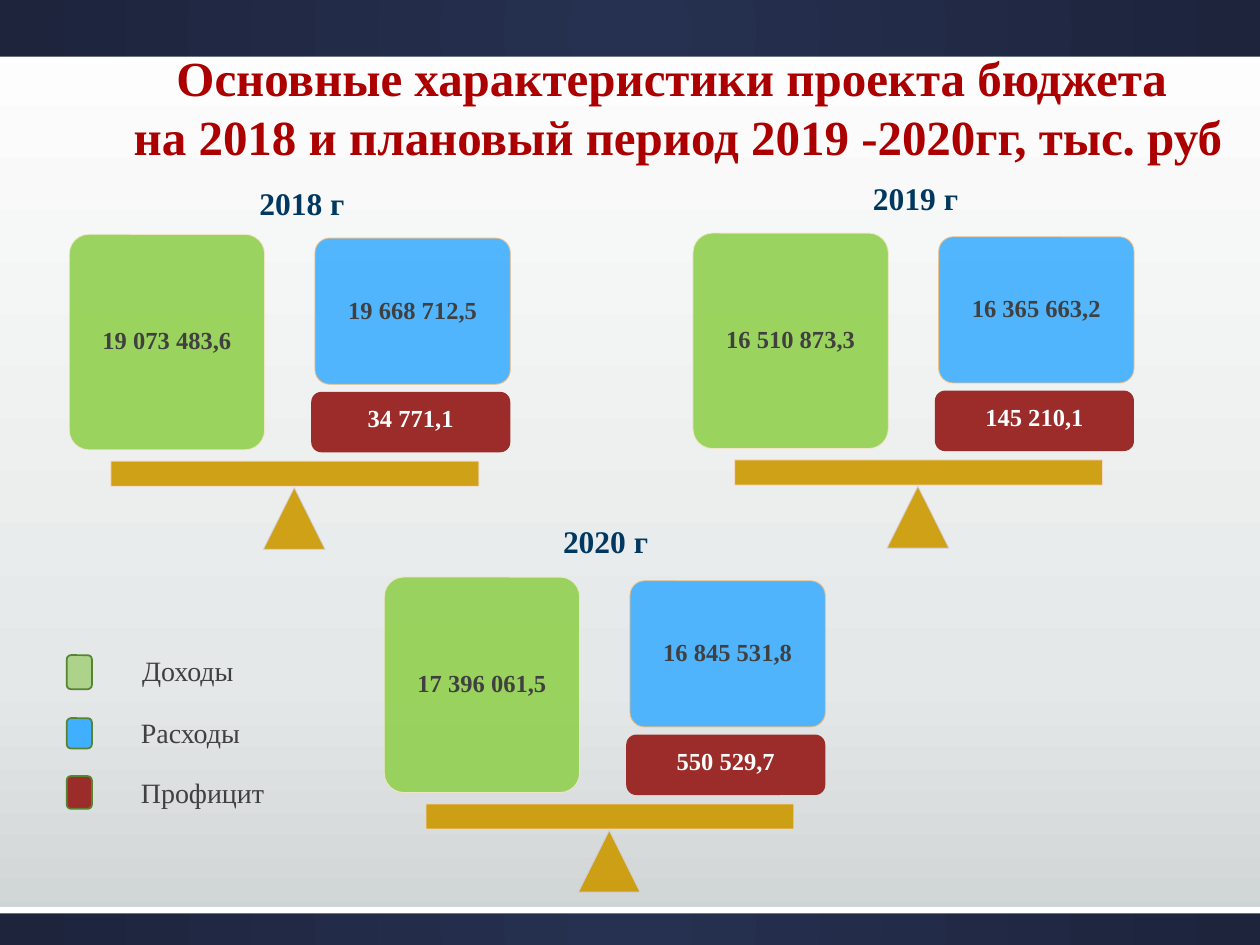
from lxml.etree import SubElement as Sub
from pptx import Presentation
from pptx.dml.color import RGBColor as RGB
from pptx.enum.shapes import MSO_SHAPE as Kind
from pptx.enum.text import MSO_ANCHOR as Anchor, PP_ALIGN as Align
from pptx.oxml import parse_xml
from pptx.oxml.ns import nsdecls, qn
from pptx.util import Inches, Pt

# Content
TITLE = ["Основные характеристики проекта бюджета ",
         "на 2018 и плановый период 2019 -2020гг, тыс. руб"]
# year, income, spending, balance, left and top of scale, left and top of year
SCALES = [
    ("2019 г", "16 510 873,3", "16 365 663,2", "145 210,1", (5.5, 1.85), (6.83, 1.37)),
    ("2018 г", "19 073 483,6", "19 668 712,5", "34 771,1", (0.55, 1.86), (1.96, 1.41)),
    ("2020 г", "17 396 061,5", "16 845 531,8", "550 529,7", (3.05, 4.58), (4.37, 4.09)),
]
# label, colour, top and height of key, left, top and width of label
LEGEND = [
    ("Доходы", "key", 5.2, 0.27, 1.03, 5.14, 0.94),
    ("Расходы", "blue", 5.7, 0.24, 1.02, 5.63, 1.0),
    ("Профицит", "red", 6.16, 0.26, 1.02, 6.11, 1.19),
]
HEX = {
    "white": "FFFFFF", "title": "AC0000", "year": "003860", "text": "404040",
    "green": "92D050", "blue": "40AFFF", "red": "9B2C29", "gold": "CC9900",
    "key": "ADD38A", "rim": "588331", "cream": "F4E8CD", "peach": "F6BC78",
    "lilac": "D6D1E0", "rose": "F9DBCD",
}
SKY = [(0, "FFFFFF"), (72, "E5E8E8"), (100, "CDD2D2")]
NAVY = [(0, "263050"), (100, "1D243C")]
ROUND = '<a:path path="circle"><a:fillToRect l="50000" t="50000" r="50000" b="50000"/></a:path>'
DOWN = '<a:lin ang="5400000" scaled="0"/>'
WIDE, HIGH = 10, 7.5

deck = Presentation()
deck.slide_width, deck.slide_height = Inches(WIDE), Inches(HIGH)
slide = deck.slides.add_slide(deck.slide_layouts[6])


def color(name):
    return RGB.from_string(HEX[name])


def blend(root, stops, way):
    """Swap the solid fill below root for a gradient."""
    old = next(root.iter(qn("a:solidFill")))
    marks = "".join(f'<a:gs pos="{pos * 1000}"><a:srgbClr val="{tone}"/></a:gs>'
                    for pos, tone in stops)
    old.getparent().replace(old, parse_xml(
        f'<a:gradFill {nsdecls("a")} rotWithShape="1"><a:gsLst>{marks}</a:gsLst>{way}</a:gradFill>'))


def fade(fill, root):
    """Make a solid colour 90 % opaque."""
    tone = next(root.iter(qn("a:srgbClr")))
    Sub(tone, qn("a:alpha"), val="90000")


def draw(kind, box, fill, line=None, width=0.5, clear=False, adj=None):
    shape = slide.shapes.add_shape(kind, *map(Inches, box))
    shape.shadow.inherit = False
    shape.fill.solid()
    shape.fill.fore_color.rgb = color(fill)
    if line:
        shape.line.color.rgb = color(line)
        shape.line.width = Pt(width)
    else:
        shape.line.fill.background()
    if clear:
        for tone in list(shape.element.spPr.iter(qn("a:srgbClr"))):
            Sub(tone, qn("a:alpha"), val="90000")
    if adj:
        shape.adjustments[0] = adj
    return shape


def write(shape, lines, size=14, tone="text", bold=True, align=Align.CENTER,
          anchor=Anchor.MIDDLE, wrap=True, pads=(0.1, 0.05), space=None):
    frame = shape.text_frame
    frame.word_wrap = wrap
    frame.vertical_anchor = anchor
    frame.margin_left = frame.margin_right = Inches(pads[0])
    frame.margin_top = frame.margin_bottom = Inches(pads[1])
    for i, line in enumerate(lines):
        para = frame.add_paragraph() if i else frame.paragraphs[0]
        para.alignment, para.line_spacing = align, space
        run = para.add_run()
        run.text = line
        font = run.font
        font.name, font.size, font.bold = "Times New Roman", Pt(size), bold
        font.color.rgb = color(tone)


def label(box, lines, **form):
    write(slide.shapes.add_textbox(*map(Inches, box)), lines,
          anchor=Anchor.TOP, wrap=False, **form)


# Background and bands
slide.background.fill.solid()
slide.background.fill.fore_color.rgb = color("white")
blend(slide.element, SKY, DOWN)
for top, high, strip in [(7.2, 0.3, 7.2), (0, 0.5, 0.45)]:
    band = draw(Kind.RECTANGLE, (0, top, WIDE, high), "white")
    blend(band.element.spPr, NAVY, ROUND)
    draw(Kind.RECTANGLE, (0, strip, WIDE, 0.05), "white")

# Title
label((0.91, 0.33, 8.94, 1.04), TITLE, size=28, tone="title")

# Scales
for year, income, spent, rest, (x, y), spot in SCALES:
    card = draw(Kind.ROUNDED_RECTANGLE, (x, y, 1.55, 1.71), "green", "cream",
                clear=True, adj=0.1)
    write(card, [income], space=0.9)
    card = draw(Kind.ROUNDED_RECTANGLE, (x + 1.95, y + 0.03, 1.55, 1.16), "blue",
                "peach", clear=True, adj=0.1)
    write(card, [spent], space=0.9)
    draw(Kind.ISOSCELES_TRIANGLE, (x + 1.54, y + 2.01, 0.49, 0.49), "gold", "lilac",
         clear=True)
    draw(Kind.RECTANGLE, (x + 0.33, y + 1.8, 2.92, 0.2), "gold", "rose", clear=True)
    card = draw(Kind.ROUNDED_RECTANGLE, (x + 1.92, y + 1.25, 1.58, 0.48), "red")
    write(card, [rest], tone="white", anchor=Anchor.TOP, pads=(0.08, 0.09), space=0.9)
    label((*spot, 0.88, 0.4), [year], size=18, tone="year", align=Align.LEFT)

# Legend
for name, tone, top, high, x, y, wide in LEGEND:
    draw(Kind.ROUNDED_RECTANGLE, (0.53, top, 0.2, high), tone, "rim", width=1)
    label((x, y, wide, 0.37), [name], size=16, bold=False, align=Align.LEFT)

deck.save("out.pptx")
